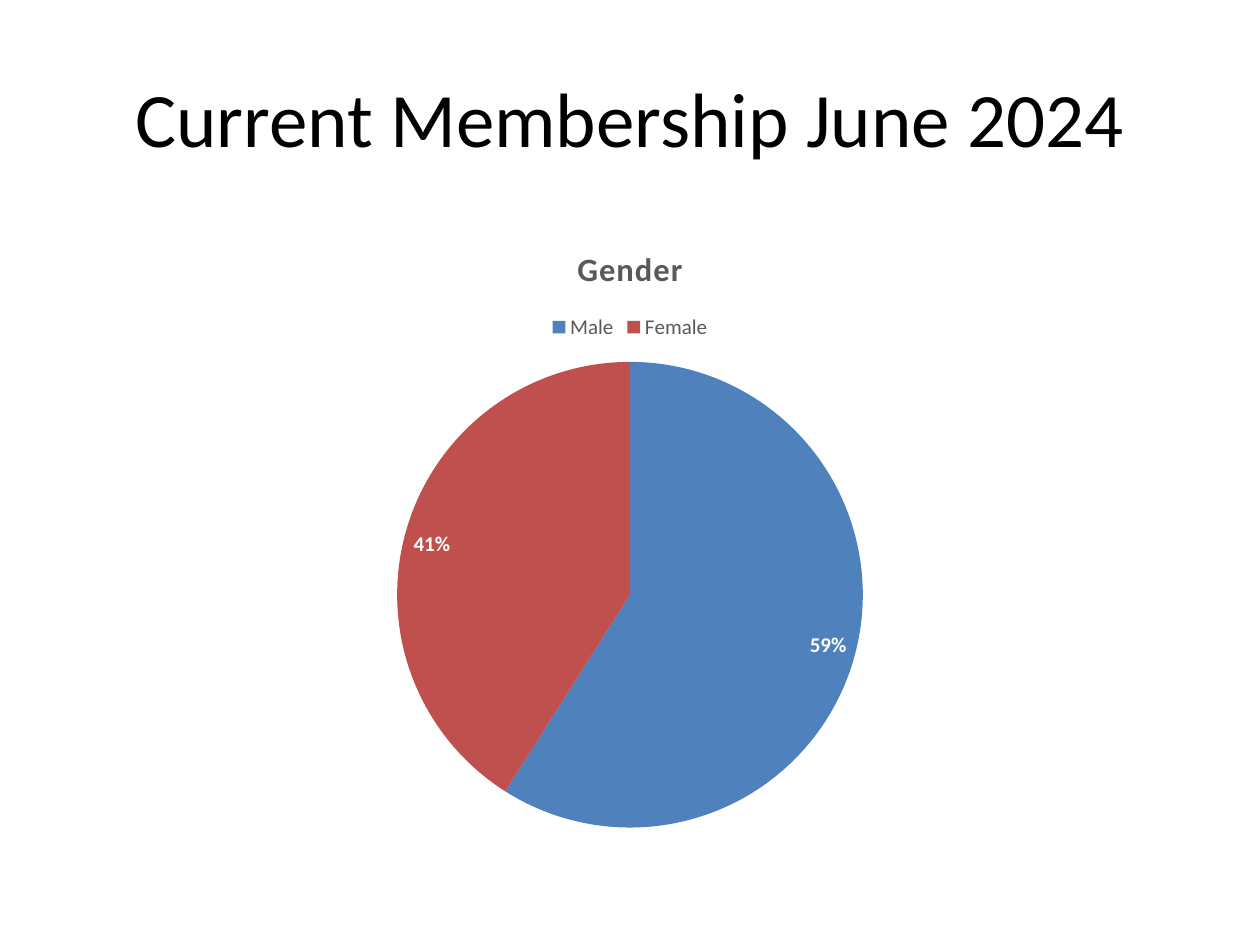
from pptx import Presentation
from pptx.chart.data import CategoryChartData
from pptx.dml.color import RGBColor
from pptx.enum.chart import XL_CHART_TYPE, XL_LABEL_POSITION, XL_LEGEND_POSITION
from pptx.enum.text import MSO_ANCHOR, PP_ALIGN
from pptx.util import Emu, Pt

SCALE = 914400 / 126  # EMU per px


def px(n):
    return Emu(round(n * SCALE))


def rgb(color):
    return RGBColor.from_string(color)


def style_font(font, size, color, bold=False, name="Calibri"):
    font.name, font.size, font.bold = name, Pt(size), bold
    font.color.rgb = rgb(color)


def put_text(tf, text, size=18, color="000000", bold=False, align=PP_ALIGN.CENTER):
    p = tf.paragraphs[0]
    p.alignment = align
    r = p.add_run()
    r.text = text
    style_font(r.font, size, color, bold)
    return r


class Deck:
    GRAY = "595959"

    def __init__(self, width, height):
        self.prs = Presentation()
        self.prs.slide_width, self.prs.slide_height = px(width), px(height)
        self.s = self.prs.slides.add_slide(self.prs.slide_layouts[6])

    def title(self, text, x, y, w, h):
        tf = self.s.shapes.add_textbox(px(x), px(y), px(w), px(h)).text_frame
        tf.word_wrap = True
        tf.vertical_anchor = MSO_ANCHOR.MIDDLE
        put_text(tf, text, size=44)

    def pie(self, name, slices, x, y, w, h):
        data = CategoryChartData()
        data.categories = [label for label, _, _ in slices]
        data.add_series(name, [value for _, value, _ in slices])
        chart = self.s.shapes.add_chart(
            XL_CHART_TYPE.PIE, px(x), px(y), px(w), px(h), data).chart
        style_font(chart.font, 10, "000000")

        # Chart title, slightly letterspaced
        chart.has_title = True
        r = put_text(chart.chart_title.text_frame, name, size=18.6,
                     color=self.GRAY, bold=True)
        r.font._element.set("spc", "50")
        chart.chart_title.include_in_layout = False

        # Legend
        chart.has_legend = True
        chart.legend.position = XL_LEGEND_POSITION.TOP
        chart.legend.include_in_layout = False
        style_font(chart.legend.font, 12, self.GRAY)

        # Slices
        plot = chart.plots[0]
        plot.vary_by_categories = True
        for i, (_, _, color) in enumerate(slices):
            fill = plot.series[0].points[i].format.fill
            fill.solid()
            fill.fore_color.rgb = rgb(color)

        # Percent labels
        labels = plot.series[0].data_labels
        labels.show_percentage, labels.show_value = True, False
        labels.number_format, labels.number_format_is_linked = "0%", False
        labels.position = XL_LABEL_POSITION.INSIDE_END
        style_font(labels.font, 12, "FFFFFF", bold=True)


def main():
    deck = Deck(1260, 945)
    deck.title("Current Membership June 2024", 63, 38, 1134, 158)
    deck.pie("Gender", [("Male", 59, "4F81BD"), ("Female", 41, "C0504D")],
             63, 221, 1134, 624)
    deck.prs.save("out.pptx")


if __name__ == "__main__":
    main()
